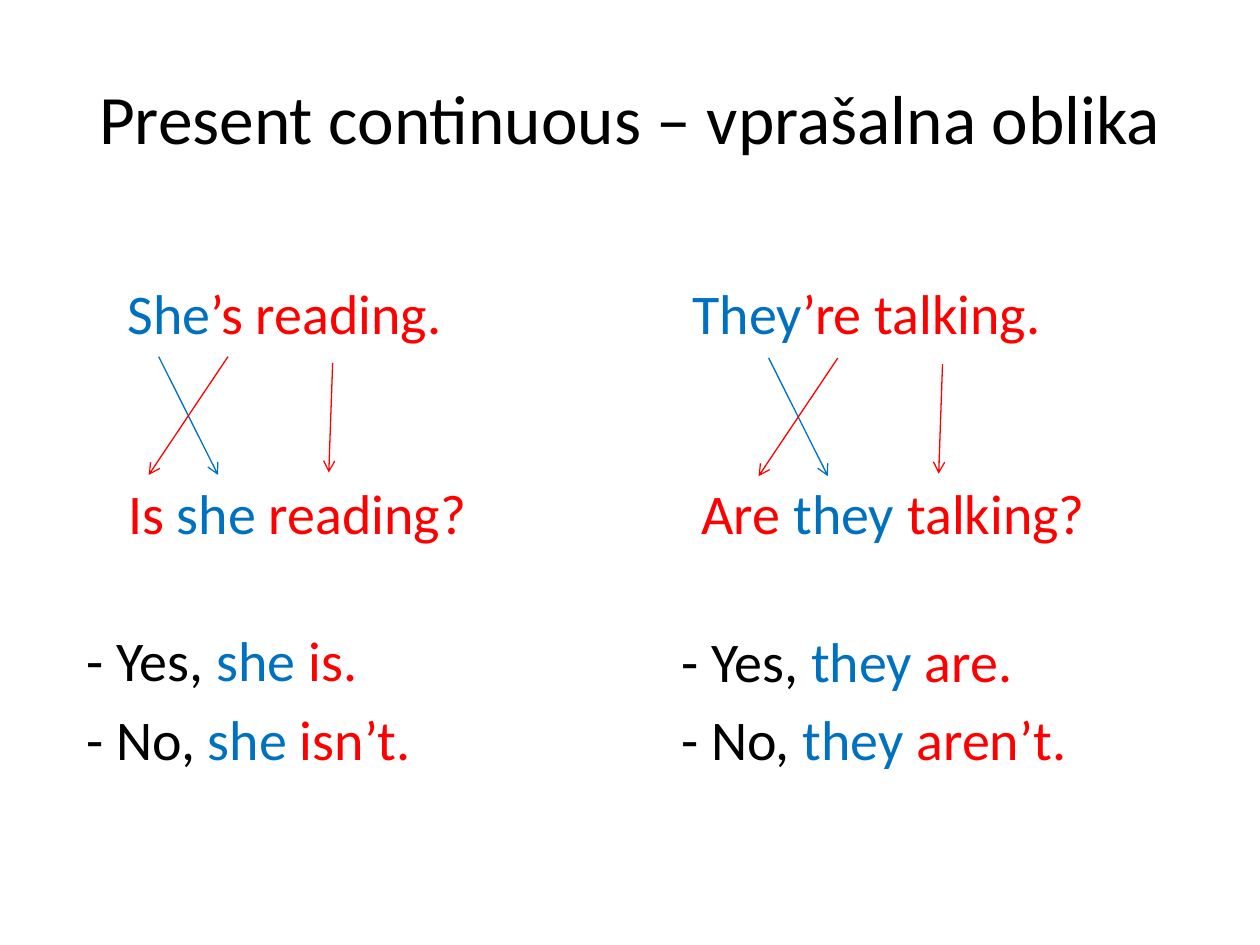
"""Build a slide on the question form of the present continuous."""
from pptx import Presentation
from pptx.dml.color import RGBColor as Rgb
from pptx.enum.shapes import MSO_CONNECTOR as Conn
from pptx.enum.text import MSO_ANCHOR as Anchor, MSO_AUTO_SIZE as Fit, PP_ALIGN as Align
from pptx.oxml.ns import qn
from pptx.util import Pt
from lxml.etree import SubElement as Sub

HUES = {"ink": "000000", "who": "0070C0", "verb": "FF0000"}


def write(box, lines, size=32, align=Align.LEFT, hang=0, gap=0,
          anchor=Anchor.TOP, fit=Fit.NONE):
    frame = box.text_frame
    frame.word_wrap = True
    frame.auto_size = fit
    frame.vertical_anchor = anchor
    for i, line in enumerate(lines):
        para = frame.add_paragraph() if i else frame.paragraphs[0]
        props = para._p.get_or_add_pPr()
        props.set("marL", str(Pt(hang)))
        props.set("indent", str(Pt(-hang)))
        Sub(props, qn("a:buNone"))
        para.alignment = align
        para.space_before = Pt(gap if i else 0)
        for text, hue in line:
            run = para.add_run()
            run.text = text
            run.font.name = "Calibri"
            run.font.size = Pt(size)
            run.font.color.rgb = Rgb.from_string(HUES[hue])


class Deck:
    def __init__(self):
        self.prs = Presentation()
        self.prs.slide_width, self.prs.slide_height = Pt(720), Pt(540)
        self.slide = self.prs.slides.add_slide(self.prs.slide_layouts[1])

    def holder(self, idx, spot, lines, **form):
        box = self.slide.placeholders[idx]
        box.left, box.top, box.width, box.height = map(Pt, spot)
        write(box, lines, **form)

    def label(self, spot, lines, **form):
        write(self.slide.shapes.add_textbox(*map(Pt, spot)), lines, **form)

    def arrows(self, dx, dy, paths):
        group = self.slide.shapes.add_group_shape()
        for hue, x1, y1, x2, y2 in paths:
            ends = map(Pt, (x1 + dx, y1 + dy, x2 + dx, y2 + dy))
            line = group.shapes.add_connector(Conn.STRAIGHT, *ends)
            line.line.color.rgb = Rgb.from_string(HUES[hue])
            line.line.width = Pt(0.75)
            Sub(line.line._get_or_add_ln(), qn("a:tailEnd"), type="arrow")
            Sub(line._element.spPr, qn("a:effectLst"))


def main():
    deck = Deck()
    deck.holder(0, (36, 21.6, 648, 90),
                [[("Present continuous – vprašalna oblika", "ink")]],
                size=39.6, align=Align.CENTER, anchor=Anchor.MIDDLE)

    head = {"align": Align.CENTER, "hang": 27}
    deck.holder(1, (36, 155.5, 260.6, 53.3),
                [[("She", "who"), ("’s reading. ", "verb")]], **head)
    deck.label((354.2, 155.5, 289.4, 53.3),
               [[("They", "who"), ("’re talking. ", "verb")]], **head)

    sides = [
        ("she ", "Is ", "reading?", "is.", "isn’t.",
         (66.2, 270, 244, 46), (42.5, 354.2, 249, 96.5)),
        ("they ", "Are ", "talking?", "are.", "aren’t.",
         (393.8, 270, 266.4, 46), (382.3, 354.2, 255, 102.2)),
    ]
    for who, verb, act, yes, no, ask, reply in sides:
        deck.label(ask, [[(verb, "verb"), (who, "who"), (act, "verb")]],
                   fit=Fit.SHAPE_TO_FIT_TEXT)
        deck.label(reply, [[(lead, "ink"), (who, "who"), (end, "verb")]
                           for lead, end in (("- Yes, ", yes), ("- No, ", no))],
                   hang=27, gap=6.4)

    paths = [("who", 90.7, 203.8, 124.6, 271.4),
             ("verb", 130.3, 203.8, 85, 271.4),
             ("verb", 190.1, 207.4, 187.9, 270)]
    for dx, dy in ((0, 0), (348.5, 0.7)):
        deck.arrows(dx, dy, paths)

    deck.prs.save("out.pptx")


if __name__ == "__main__":
    main()
